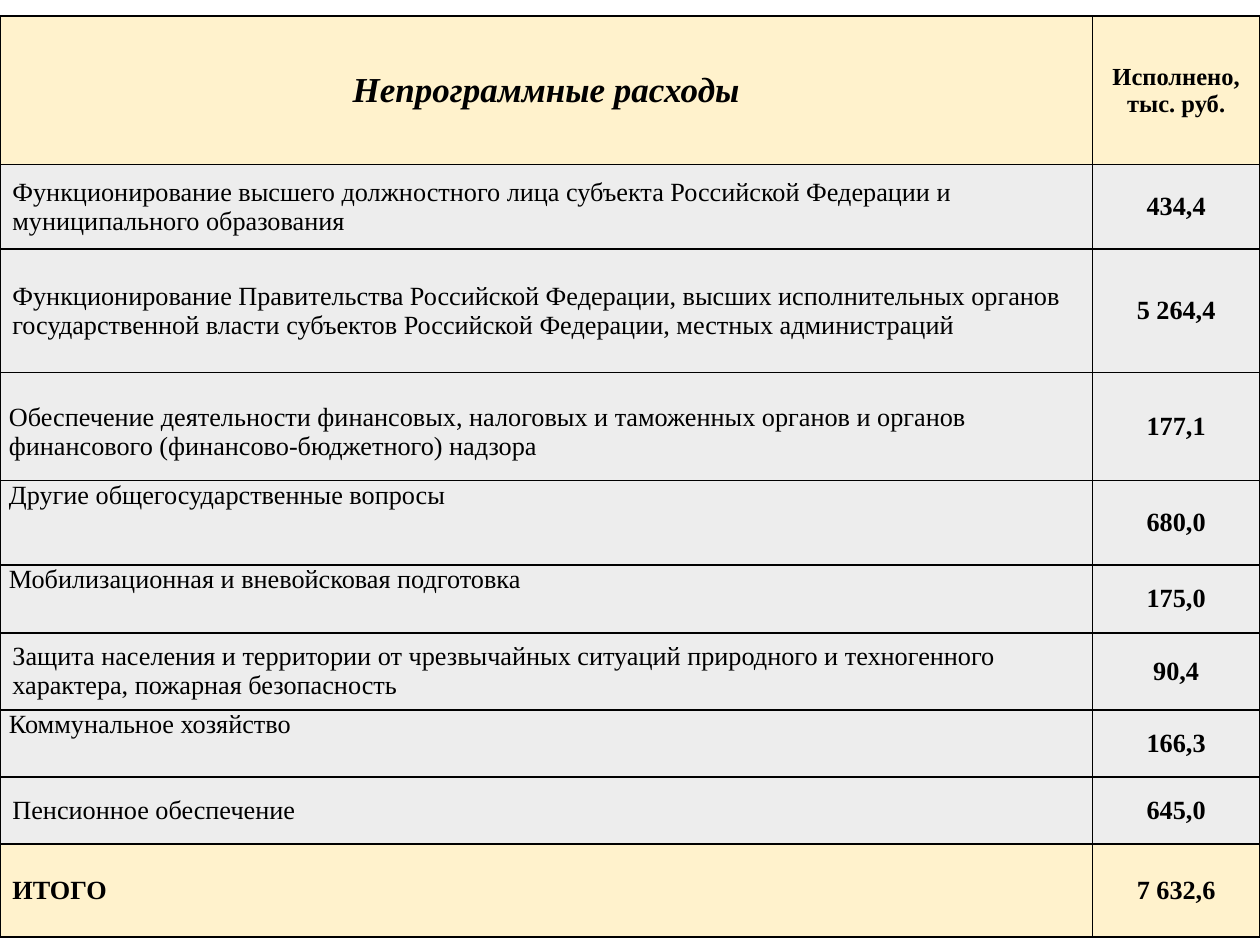
"""Build a slide with the table of non-programme budget spending."""
from lxml import etree
from pptx import Presentation, util as u
from pptx.dml import color
from pptx.enum import text as t
from pptx.oxml import ns

HUE = {"head": "FFF2CC", "body": "EDEDED", "ink": "000000"}
COLS = (22.02, 3.38)
WIDE = (0.25, 0.13)
SLIM = (0.18, 0)
MID, TOP = t.MSO_ANCHOR.MIDDLE, t.MSO_ANCHOR.TOP
ROWS = [
    ("Непрограммные расходы", "Исполнено, тыс. руб.", 3, WIDE, MID),
    ("Функционирование высшего должностного лица субъекта Российской Федерации и "
     "муниципального образования", "434,4", 1.7, WIDE, MID),
    ("Функционирование Правительства Российской Федерации, высших исполнительных "
     "органов государственной власти субъектов Российской Федерации, местных "
     "администраций", "5 264,4", 2.49, WIDE, MID),
    ("Обеспечение деятельности финансовых, налоговых и таможенных органов и органов "
     "финансового (финансово-бюджетного) надзора", "177,1", 2.18, (0.18, 0.61), TOP),
    ("Другие общегосударственные вопросы", "680,0", 1.7, SLIM, TOP),
    ("Мобилизационная и вневойсковая подготовка", "175,0", 1.37, SLIM, TOP),
    ("Защита населения и территории от чрезвычайных ситуаций природного и "
     "техногенного характера, пожарная безопасность", "90,4", 1.55, WIDE, MID),
    ("Коммунальное хозяйство", "166,3", 1.35, SLIM, TOP),
    ("Пенсионное обеспечение", "645,0", 1.35, WIDE, MID),
    ("ИТОГО", "7 632,6", 1.88, WIDE, MID),
]


def style(item, form):
    for key, val in form.items():
        setattr(item, key, val)


def frame(cell):
    props = cell._tc.get_or_add_tcPr()
    for spot, side in enumerate(("lnL", "lnR", "lnT", "lnB")):
        line = etree.Element(ns.qn("a:" + side), w=str(u.Pt(1)))
        fill = etree.SubElement(line, ns.qn("a:solidFill"))
        etree.SubElement(fill, ns.qn("a:srgbClr"), val=HUE["ink"])
        props.insert(spot, line)


def draw(cell, words, hue, form, align, font):
    cell.text = words
    style(cell, form)
    cell.fill.solid()
    cell.fill.fore_color.rgb = color.RGBColor.from_string(HUE[hue])
    para = cell.text_frame.paragraphs[0]
    para.alignment = align
    face = para.runs[0].font
    style(face, {"name": "Times New Roman", **font})
    face.color.rgb = color.RGBColor.from_string(HUE["ink"])
    frame(cell)


def main():
    deck = Presentation()
    style(deck, {"slide_width": u.Cm(25.4), "slide_height": u.Cm(19.05)})
    slide = deck.slides.add_slide(deck.slide_layouts[6])
    high = sum(row[2] for row in ROWS)
    grid = slide.shapes.add_table(len(ROWS), len(COLS), 0, u.Cm(0.32),
                                  u.Cm(sum(COLS)), u.Cm(high)).table
    for col, wide in zip(grid.columns, COLS):
        col.width = u.Cm(wide)
    last = len(ROWS) - 1
    for r, (name, sum_, tall, (side, top), anchor) in enumerate(ROWS):
        grid.rows[r].height = u.Cm(tall)
        hue = "head" if r in (0, last) else "body"
        for c, words in enumerate((name, sum_)):
            form = {"margin_left": u.Cm(side), "margin_right": u.Cm(side),
                    "margin_top": u.Cm(0 if c and anchor == TOP else top),
                    "margin_bottom": u.Cm(0 if anchor == TOP else top),
                    "vertical_anchor": MID if c else anchor}
            size = 15 if r else (20, 14)[c]
            font = {"size": u.Pt(size), "bold": bool(c) or hue == "head",
                    "italic": r == c == 0}
            align = t.PP_ALIGN.CENTER if c or not r else t.PP_ALIGN.LEFT
            draw(grid.cell(r, c), words, hue, form, align, font)
    deck.save("out.pptx")


if __name__ == "__main__":
    main()
